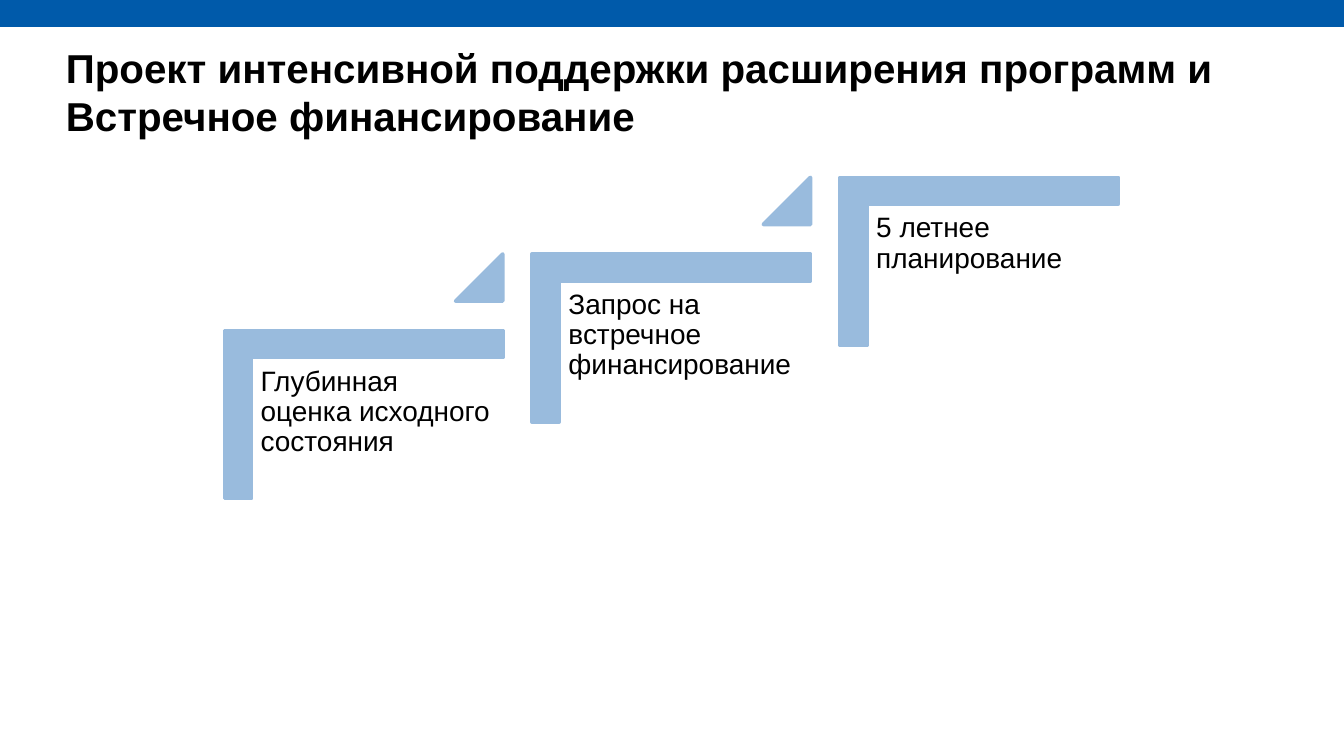
"""Build a slide with a three-step staircase on programme expansion funding."""
from dataclasses import dataclass

from pptx import Presentation
from pptx.dml.color import RGBColor
from pptx.enum.shapes import MSO_SHAPE
from pptx.enum.text import MSO_ANCHOR, MSO_AUTO_SIZE, PP_ALIGN
from pptx.shapes.autoshape import Shape
from pptx.slide import Slide
from pptx.text.text import TextFrame
from pptx.util import Inches, Pt

RECTANGLE = MSO_SHAPE.RECTANGLE
CORNER = MSO_SHAPE.CORNER
TRIANGLE = MSO_SHAPE.ISOSCELES_TRIANGLE
TOP = MSO_ANCHOR.TOP
LEFT = PP_ALIGN.LEFT
NO_AUTOFIT = MSO_AUTO_SIZE.NONE

BAR_BLUE = RGBColor(0x00, 0x5A, 0xAA)
STEP_BLUE = RGBColor(0x99, 0xBB, 0xDD)
BLACK = RGBColor(0x00, 0x00, 0x00)
FONT = "Arial"
SLIDE_WIDTH = Inches(10)
SLIDE_HEIGHT = SLIDE_WIDTH * 9 // 16
STEP_RUN = 2.29
STEP_RISE = 0.57

TITLE_LINES = [
    "Проект интенсивной поддержки расширения программ и",
    "Встречное финансирование",
]


@dataclass(frozen=True)
class Box:
    left: float
    top: float
    width: float
    height: float

    def climbed(self, level: int) -> "Box":
        return Box(self.left + STEP_RUN * level, self.top - STEP_RISE * level,
                   self.width, self.height)

    def lengths(self) -> list[int]:
        return [Inches(value) for value in (self.left, self.top, self.width, self.height)]


TOP_BAR = Box(0, 0, 10.02, 0.2)
TITLE = Box(0.49, 0.32, 9.23, 0.94)
BRACKET = Box(2.08, 2.05, 1.25, 2.07)
LABEL = Box(1.88, 2.67, 1.87, 1.64)
MARKER = Box(3.39, 1.89, 0.35, 0.35)

STEPS = [
    "Глубинная оценка исходного состояния",
    "Запрос на встречное финансирование",
    "5 летнее планирование",
]


def add_filled_shape(slide: Slide, kind: MSO_SHAPE, box: Box, color: RGBColor) -> Shape:
    shape = slide.shapes.add_shape(kind, *box.lengths())
    shape.shadow.inherit = False
    shape.fill.solid()
    shape.fill.fore_color.rgb = color
    shape.line.color.rgb = color
    shape.line.width = Pt(2)
    return shape


def format_frame(frame: TextFrame, margins: tuple[float, float, float, float]) -> None:
    frame.word_wrap = True
    frame.auto_size = NO_AUTOFIT
    frame.vertical_anchor = TOP
    (frame.margin_left, frame.margin_top,
     frame.margin_right, frame.margin_bottom) = [Inches(margin) for margin in margins]


def write_lines(frame: TextFrame, lines: list[str], size: float, bold: bool,
                spacing: float | Pt) -> None:
    paragraph = frame.paragraphs[0]
    paragraph.alignment = LEFT
    paragraph.line_spacing = spacing
    for index, line in enumerate(lines):
        if index:
            paragraph.add_line_break()
        run = paragraph.add_run()
        run.text = line
        run.font.name = FONT
        run.font.size = Pt(size)
        run.font.bold = bold
        run.font.color.rgb = BLACK


def add_title(slide: Slide) -> None:
    title = slide.shapes.title
    title.left, title.top, title.width, title.height = TITLE.lengths()
    format_frame(title.text_frame, (0, 0, 0, 0.05))
    write_lines(title.text_frame, TITLE_LINES, 21.6, True, Pt(25.8))


def add_step(slide: Slide, level: int, label: str) -> None:
    bracket = add_filled_shape(slide, CORNER, BRACKET.climbed(level), STEP_BLUE)
    bracket.rotation = 90
    bracket.adjustments[0] = bracket.adjustments[1] = 0.16
    text_box = slide.shapes.add_textbox(*LABEL.climbed(level).lengths())
    format_frame(text_box.text_frame, (0.06, 0.06, 0.06, 0.06))
    write_lines(text_box.text_frame, [label], 15, False, 0.9)


def add_marker(slide: Slide, level: int) -> None:
    marker = add_filled_shape(slide, TRIANGLE, MARKER.climbed(level), STEP_BLUE)
    marker.adjustments[0] = 1


def main() -> None:
    presentation = Presentation()
    presentation.slide_width = SLIDE_WIDTH
    presentation.slide_height = SLIDE_HEIGHT
    slide = presentation.slides.add_slide(presentation.slide_layouts[5])

    top_bar = add_filled_shape(slide, RECTANGLE, TOP_BAR, BAR_BLUE)
    top_bar.line.fill.background()
    add_title(slide)
    for level, label in enumerate(STEPS):
        add_step(slide, level, label)
        if level < len(STEPS) - 1:
            add_marker(slide, level)

    presentation.save("out.pptx")


if __name__ == "__main__":
    main()
